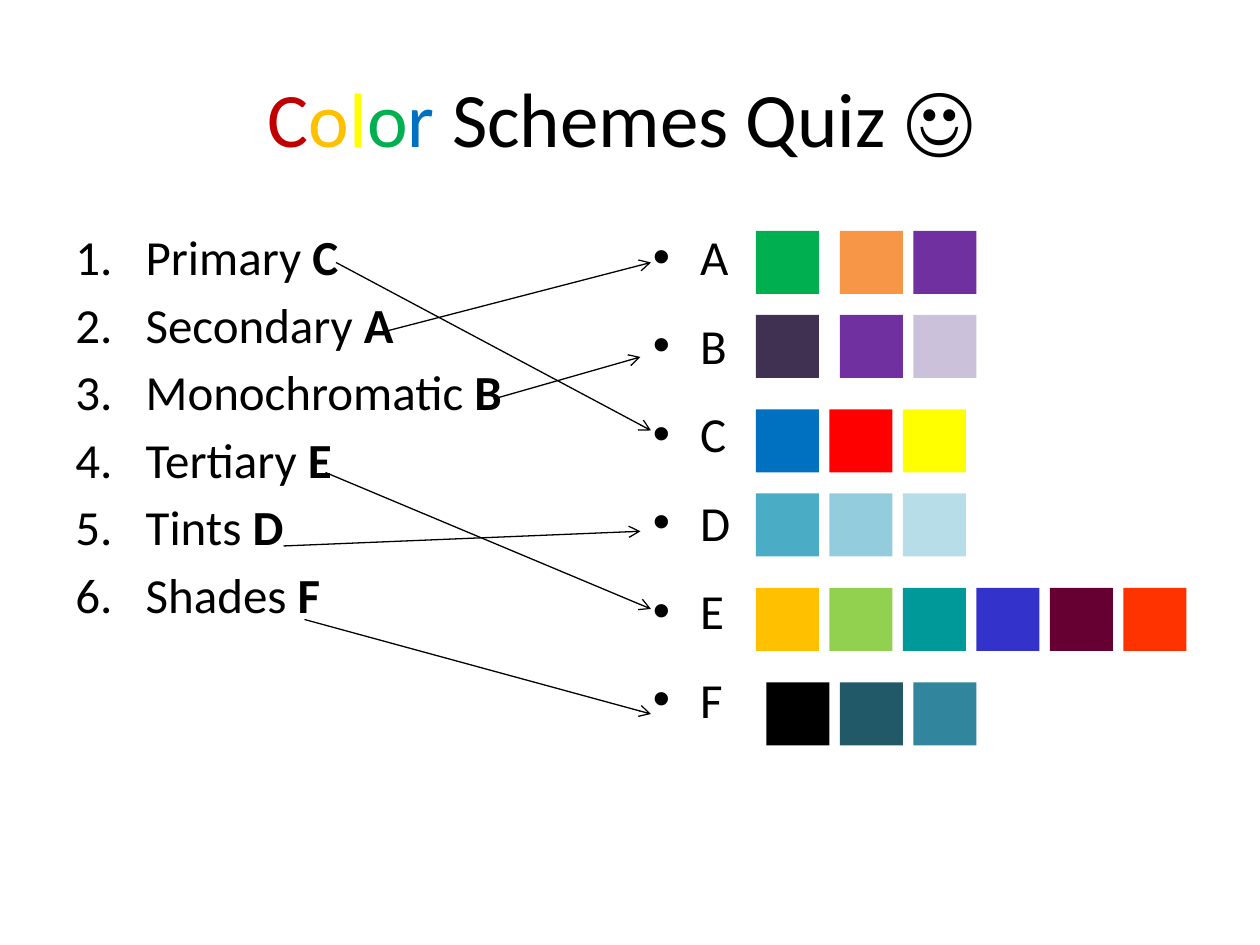
from typing import NamedTuple

from lxml.etree import SubElement
from pptx import Presentation
from pptx.dml.color import RGBColor
from pptx.enum.shapes import MSO_CONNECTOR, MSO_SHAPE
from pptx.enum.text import MSO_ANCHOR, PP_ALIGN
from pptx.oxml.ns import qn
from pptx.util import Pt

PX = 7620  # 120 px to the inch
FONT = "Calibri"
SWATCH = 60

COLORS = {
    "black": "000000", "crimson": "C00000", "amber": "FFC000", "yellow": "FFFF00",
    "green": "00B050", "blue": "0070C0", "red": "FF0000", "orange": "F79646",
    "purple": "7030A0", "dark purple": "403152", "lavender": "CCC1DA",
    "aqua": "4BACC6", "light aqua": "93CDDD", "pale aqua": "B7DEE8",
    "dark teal": "215968", "steel": "31859C", "lime": "92D050", "teal": "009999",
    "indigo": "3333CC", "maroon": "660033", "vermilion": "FF3300",
}


class Scheme(NamedTuple):
    letter: str
    top: int
    lefts: tuple[int, ...]
    colors: tuple[str, ...]


class Question(NamedTuple):
    name: str
    answer: str
    start: tuple[int, int]
    end: tuple[int, int]


class ListStyle(NamedTuple):
    left: int
    indent: int
    space_after: int
    bullet_tag: str
    bullet: dict[str, str]


TITLE = [("C", "crimson"), ("o", "amber"), ("l", "yellow"), ("o", "green"),
         ("r ", "blue"), ("Schemes Quiz ☺ ", "black")]

EVEN = tuple(range(720, 1071, 70))
SPLIT = (720, 800, 870)
SCHEMES = [
    Scheme("A", 220, SPLIT, ("green", "orange", "purple")),
    Scheme("B", 300, SPLIT, ("dark purple", "purple", "lavender")),
    Scheme("C", 390, EVEN[:3], ("blue", "red", "yellow")),
    Scheme("D", 470, EVEN[:3], ("aqua", "light aqua", "pale aqua")),
    Scheme("E", 560, EVEN,
           ("amber", "lime", "teal", "indigo", "maroon", "vermilion")),
    Scheme("F", 650, (730, 800, 870), ("black", "dark teal", "steel")),
]

QUESTIONS = [
    Question("Primary", "C", (320, 250), (620, 410)),
    Question("Secondary", "A", (350, 320), (620, 250)),
    Question("Monochromatic", "B", (470, 380), (610, 340)),
    Question("Tertiary", "E", (310, 450), (620, 580)),
    Question("Tints", "D", (270, 520), (610, 506)),
    Question("Shades", "F", (290, 590), (620, 680)),
]

NUMBERED = ListStyle(60, 67, 0, "a:buAutoNum", {"type": "arabicPeriod"})
BULLETED = ListStyle(610, 45, 12, "a:buChar", {"char": "•"})


def color(name: str) -> RGBColor:
    return RGBColor.from_string(COLORS[name])


def add_title(page) -> None:
    box = page.shapes.title
    box.left, box.top, box.width, box.height = (
        PX * n for n in (60, 36, 1080, 150))
    box.text_frame.vertical_anchor = MSO_ANCHOR.MIDDLE
    para = box.text_frame.paragraphs[0]
    para.alignment = PP_ALIGN.CENTER
    para.font.name, para.font.size = FONT, Pt(44)
    for text, name in TITLE:
        span = para.add_run()
        span.text = text
        span.font.color.rgb = color(name)


def add_list(page, style: ListStyle, items: list[tuple[str, str]]) -> None:
    """Draw a list whose items are a plain part and a bold part."""
    box = page.shapes.add_textbox(
        style.left * PX, 210 * PX, 530 * PX, 594 * PX)
    frame = box.text_frame
    frame.word_wrap = True
    for index, (plain, bold) in enumerate(items):
        para = frame.paragraphs[0] if index == 0 else frame.add_paragraph()
        para.space_before, para.space_after = Pt(5), Pt(style.space_after)
        properties = para._p.get_or_add_pPr()
        properties.set("marL", str(style.indent * PX))
        properties.set("indent", str(-style.indent * PX))
        SubElement(properties, qn("a:buFont"), typeface="Arial")
        SubElement(properties, qn(style.bullet_tag), style.bullet)
        para.font.name, para.font.size = FONT, Pt(28)
        para.font.color.rgb = color("black")
        para.add_run().text = plain
        if bold:
            span = para.add_run()
            span.text = bold
            span.font.bold = True


def add_swatch(page, left: int, top: int, name: str) -> None:
    box = page.shapes.add_shape(
        MSO_SHAPE.RECTANGLE, left * PX, top * PX, SWATCH * PX, SWATCH * PX)
    box.shadow.inherit = False
    box.fill.solid()
    box.fill.fore_color.rgb = color(name)
    box.line.fill.background()


def add_arrow(page, start: tuple[int, int], end: tuple[int, int]) -> None:
    arrow = page.shapes.add_connector(
        MSO_CONNECTOR.STRAIGHT, *(n * PX for n in start + end))
    arrow.line.color.rgb = color("black")
    arrow.line.width = Pt(0.75)
    SubElement(arrow.line._get_or_add_ln(), qn("a:tailEnd"), type="arrow")
    SubElement(arrow._element.spPr, qn("a:effectLst"))


def main() -> None:
    deck = Presentation()
    deck.slide_width, deck.slide_height = 1200 * PX, 900 * PX
    page = deck.slides.add_slide(deck.slide_layouts[5])
    add_title(page)
    add_list(page, NUMBERED, [(q.name + " ", q.answer) for q in QUESTIONS])
    add_list(page, BULLETED, [(scheme.letter, "") for scheme in SCHEMES])
    for scheme in SCHEMES:
        for left, name in zip(scheme.lefts, scheme.colors):
            add_swatch(page, left, scheme.top, name)
    for question in QUESTIONS:
        add_arrow(page, question.start, question.end)
    deck.save("out.pptx")


if __name__ == "__main__":
    main()
